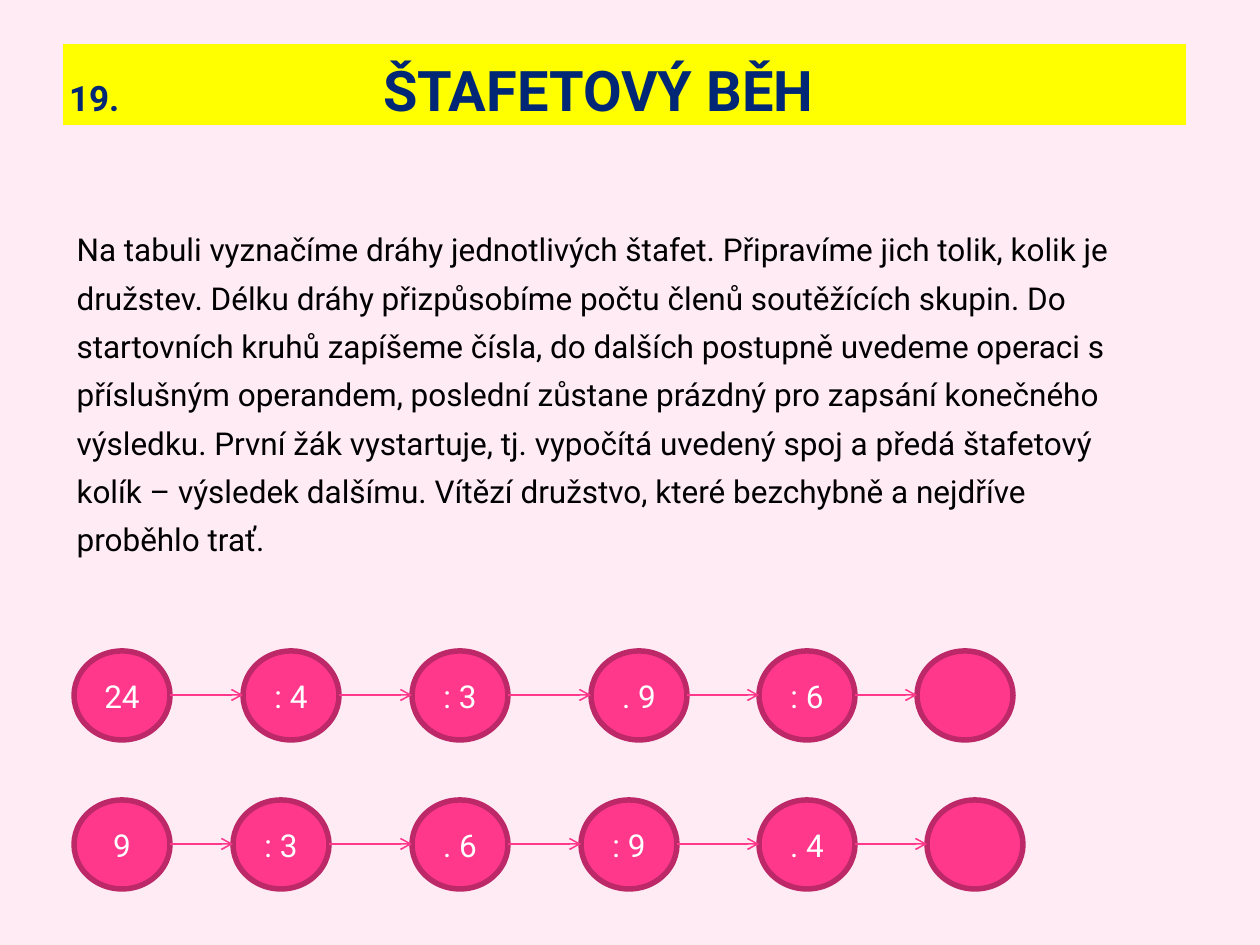
from dataclasses import dataclass
from itertools import pairwise

import pptx
import pptx.dml.color
import pptx.enum.shapes
import pptx.enum.text
import pptx.util
from lxml import etree
from pptx.oxml.ns import qn

EMU_PER_PX = 914400 / 126
FONT = "Roboto"
COLORS = {
    "background": "FFEBF4",
    "banner": "FFFF00",
    "title": "002776",
    "text": "000000",
    "circle": "FF388C",
    "outline": "BD2968",
    "label": "FFFFFF",
}
CIRCLE_WIDTH, CIRCLE_HEIGHT = 96, 89
INSTRUCTIONS = (
    "Na tabuli vyznačíme dráhy jednotlivých štafet. Připravíme jich tolik, kolik je",
    "družstev. Délku dráhy přizpůsobíme počtu členů soutěžících skupin. Do",
    "startovních kruhů zapíšeme čísla, do dalších postupně uvedeme operaci s",
    "příslušným operandem, poslední zůstane prázdný pro zapsání konečného",
    "výsledku. První žák vystartuje, tj. vypočítá uvedený spoj a předá štafetový",
    "kolík – výsledek dalšímu. Vítězí družstvo, které bezchybně a nejdříve",
    "proběhlo trať.",
)


@dataclass(frozen=True)
class Relay:
    top: int
    lefts: tuple[int, ...]
    labels: tuple[str, ...]


RELAYS = (
    Relay(651, (74, 243, 412, 591, 759, 917), ("24", ": 4", ": 3", ". 9", ": 6", "")),
    Relay(800, (74, 233, 412, 581, 759, 927), ("9", ": 3", ". 6", ": 9", ". 4", "")),
)


def px(length: int) -> pptx.util.Emu:
    return pptx.util.Emu(round(length * EMU_PER_PX))


def color(name: str) -> pptx.dml.color.RGBColor:
    return pptx.dml.color.RGBColor.from_string(COLORS[name])


def place(shape, left: int, top: int, width: int, height: int) -> None:
    shape.left, shape.top = px(left), px(top)
    shape.width, shape.height = px(width), px(height)


def add_run(paragraph, text: str, size: int, color_name: str, bold: bool = False) -> None:
    run = paragraph.add_run()
    run.text = text
    run.font.name = FONT
    run.font.size = pptx.util.Pt(size)
    run.font.bold = bold
    run.font.color.rgb = color(color_name)


def fill_title(shape) -> None:
    place(shape, 63, 44, 1123, 81)
    shape.fill.solid()
    shape.fill.fore_color.rgb = color("banner")
    frame = shape.text_frame
    frame.auto_size = pptx.enum.text.MSO_AUTO_SIZE.NONE
    frame.vertical_anchor = pptx.enum.text.MSO_ANCHOR.BOTTOM
    frame.margin_left = frame.margin_right = px(6)
    frame.margin_top = frame.margin_bottom = 0
    paragraph = frame.paragraphs[0]
    paragraph.alignment = pptx.enum.text.PP_ALIGN.LEFT
    tabs = etree.SubElement(paragraph._p.get_or_add_pPr(), qn("a:tabLst"))
    etree.SubElement(tabs, qn("a:tab"), pos=str(px(314)), algn="l")
    add_run(paragraph, "19.", 20, "title", True)
    add_run(paragraph, "\t", 38, "title", True)
    add_run(paragraph, "ŠTAFETOVÝ BĚH", 32, "title", True)


def fill_body(shape) -> None:
    place(shape, 64, 224, 1123, 668)
    frame = shape.text_frame
    frame.auto_size = pptx.enum.text.MSO_AUTO_SIZE.NONE
    for index, line in enumerate(INSTRUCTIONS):
        paragraph = frame.add_paragraph() if index else frame.paragraphs[0]
        properties = paragraph._p.get_or_add_pPr()
        properties.set("marL", "0")
        properties.set("indent", "0")
        etree.SubElement(properties, qn("a:buNone"))
        paragraph.space_before = pptx.util.Pt(6 if index else 0)
        add_run(paragraph, line, 18, "text")


def add_circle(slide, left: int, top: int, label: str) -> None:
    shape = slide.shapes.add_shape(
        pptx.enum.shapes.MSO_SHAPE.OVAL,
        px(left), px(top), px(CIRCLE_WIDTH), px(CIRCLE_HEIGHT),
    )
    shape.shadow.inherit = False
    shape.fill.solid()
    shape.fill.fore_color.rgb = color("circle")
    shape.line.color.rgb = color("outline")
    shape.line.width = pptx.util.Pt(3.15)
    if label:
        shape.text_frame.vertical_anchor = pptx.enum.text.MSO_ANCHOR.MIDDLE
        paragraph = shape.text_frame.paragraphs[0]
        paragraph.alignment = pptx.enum.text.PP_ALIGN.CENTER
        add_run(paragraph, label, 18, "label")


def add_arrow(slide, start: int, end: int, y: int) -> None:
    arrow = slide.shapes.add_connector(
        pptx.enum.shapes.MSO_CONNECTOR.STRAIGHT, px(start), px(y), px(end), px(y)
    )
    arrow.line.color.rgb = color("circle")
    arrow.line.width = pptx.util.Pt(0.9)
    etree.SubElement(arrow.line._get_or_add_ln(), qn("a:tailEnd"), type="arrow")
    etree.SubElement(arrow._element.spPr, qn("a:effectLst"))


def add_relay(slide, relay: Relay) -> None:
    for left, label in zip(relay.lefts, relay.labels):
        add_circle(slide, left, relay.top, label)
    for left, next_left in pairwise(relay.lefts):
        add_arrow(slide, left + CIRCLE_WIDTH, next_left, relay.top + CIRCLE_HEIGHT // 2)


def main() -> None:
    presentation = pptx.Presentation()
    presentation.slide_width, presentation.slide_height = px(1260), px(945)
    slide = presentation.slides.add_slide(presentation.slide_layouts[1])
    slide.background.fill.solid()
    slide.background.fill.fore_color.rgb = color("background")
    fill_title(slide.shapes.title)
    fill_body(slide.placeholders[1])
    for relay in RELAYS:
        add_relay(slide, relay)
    presentation.save("out.pptx")


if __name__ == "__main__":
    main()
